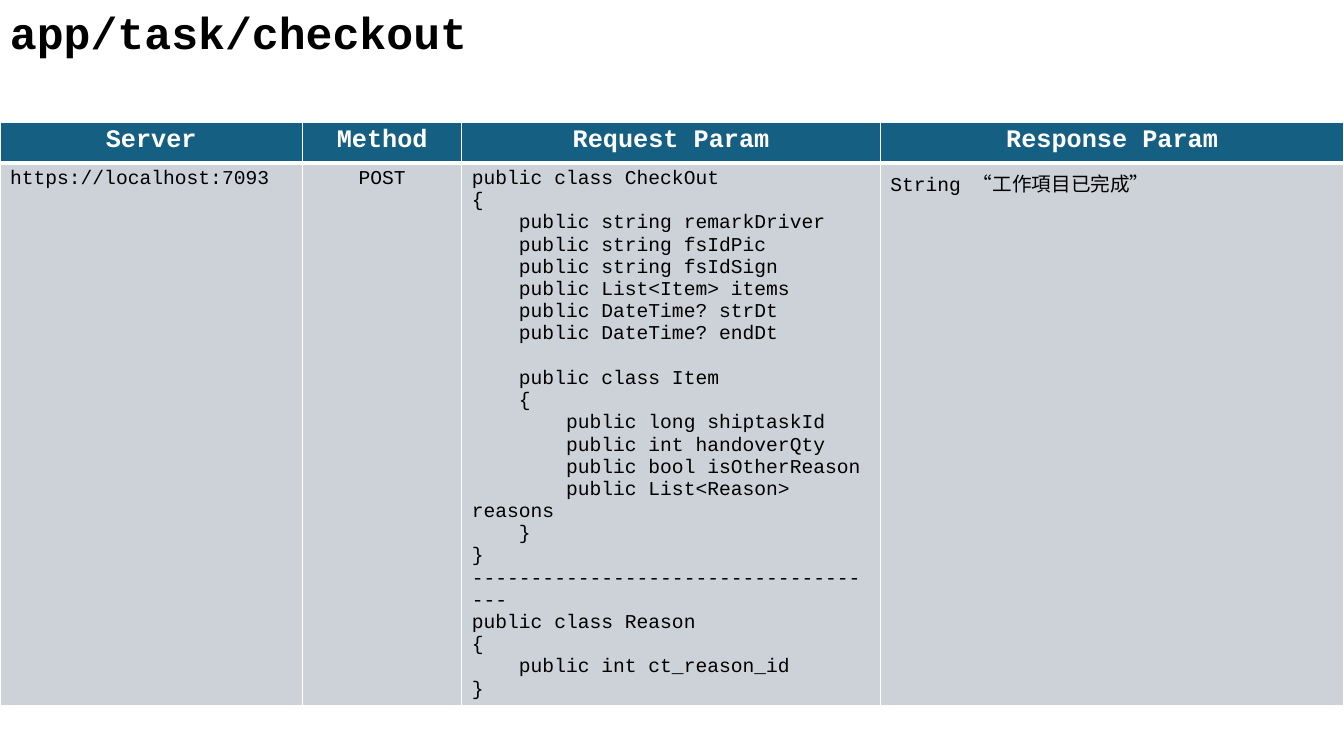
from dataclasses import dataclass

from lxml import etree
from pptx import Presentation
from pptx import util as u
from pptx.dml.color import RGBColor
from pptx.enum import text
from pptx.oxml import ns


@dataclass(frozen=True)
class Theme:
    font: str = "Courier New"
    cjk_font: str = "Noto Sans CJK SC"
    ink: str = "000000"
    white: str = "FFFFFF"
    header_fill: str = "156082"
    body_fill: str = "CCD2D8"
    title_size: int = 32
    header_size: int = 18
    body_size: int = 14
    section_gap: int = 16
    thin: int = 1
    thick: int = 3


LEFT, CENTER = text.PP_ALIGN.LEFT, text.PP_ALIGN.CENTER

REQUEST_CODE = """public class CheckOut
{
    public string remarkDriver
    public string fsIdPic
    public string fsIdSign
    public List<Item> items
    public DateTime? strDt
    public DateTime? endDt

    public class Item
    {
        public long shiptaskId
        public int handoverQty
        public bool isOtherReason
        public List<Reason> reasons
    }
}
------------------------------------
public class Reason
{
    public int ct_reason_id
}"""

# Heading, column width, body text, body alignment
COLUMNS = [
    ("Server", 3, "https://localhost:7093", LEFT),
    ("Method", 1.58, "POST", CENTER),
    ("Request Param", 4.15, REQUEST_CODE, LEFT),
    ("Response Param", 4.6, "String “工作項目已完成”", LEFT),
]
ROW_HEIGHTS = (0.41, 5.23)


class SlideBuilder:
    def __init__(self, slide, theme):
        self.slide = slide
        self.theme = theme

    def add_lines(self, frame, content, size, color, bold=False, align=LEFT):
        """Add lines; an empty line becomes space before the next one."""
        gap = 0
        paragraph = None
        for line in content.split("\n"):
            if not line:
                gap = self.theme.section_gap
                continue
            paragraph = frame.add_paragraph() if paragraph else frame.paragraphs[0]
            paragraph.alignment = align
            if gap:
                paragraph.space_before = u.Pt(gap)
                gap = 0
            run = paragraph.add_run()
            run.text = line
            style = {"name": self.theme.font, "size": u.Pt(size), "bold": bold}
            for key, value in style.items():
                setattr(run.font, key, value)
            run.font.color.rgb = RGBColor.from_string(color)
            east_asian = etree.SubElement(run.font._element, ns.qn("a:ea"))
            east_asian.set("typeface", self.theme.cjk_font)

    def title(self, content, left, top, width, height):
        box = self.slide.shapes.add_textbox(*map(u.Inches, (left, top, width, height)))
        frame = box.text_frame
        layout = {"word_wrap": True, "auto_size": text.MSO_AUTO_SIZE.SHAPE_TO_FIT_TEXT}
        for key, value in layout.items():
            setattr(frame, key, value)
        self.add_lines(frame, content, self.theme.title_size, self.theme.ink, bold=True)

    def borders(self, cell, **widths):
        properties = cell._tc.get_or_add_tcPr()
        for index, side in enumerate("LRTB"):
            width = u.Pt(widths.get(side, self.theme.thin))
            line = etree.Element(ns.qn(f"a:ln{side}"), w=str(int(width)))
            fill = etree.SubElement(line, ns.qn("a:solidFill"))
            etree.SubElement(fill, ns.qn("a:srgbClr"), val=self.theme.white)
            properties.insert(index, line)

    def cell(self, cell, content, fill, size, color, bold, align, **widths):
        cell.fill.solid()
        cell.fill.fore_color.rgb = RGBColor.from_string(fill)
        self.borders(cell, **widths)
        self.add_lines(cell.text_frame, content, size, color, bold, align)

    def table(self, columns, heights, left, top):
        theme = self.theme
        total_width = sum(width for _, width, _, _ in columns)
        sizes = map(u.Inches, (left, top, total_width, sum(heights)))
        table = self.slide.shapes.add_table(len(heights), len(columns), *sizes).table
        for row, height in zip(table.rows, heights):
            row.height = u.Inches(height)
        for index, (heading, width, body, align) in enumerate(columns):
            table.columns[index].width = u.Inches(width)
            self.cell(table.cell(0, index), heading, theme.header_fill,
                      theme.header_size, theme.white, True, CENTER, B=theme.thick)
            self.cell(table.cell(1, index), body, theme.body_fill,
                      theme.body_size, theme.ink, False, align, T=theme.thick)


def main():
    deck = Presentation()
    deck.slide_width, deck.slide_height = u.Inches(13.33), u.Inches(7.5)
    builder = SlideBuilder(deck.slides.add_slide(deck.slide_layouts[6]), Theme())

    # Endpoint specification
    builder.table(COLUMNS, ROW_HEIGHTS, 0, 1.21)

    # Endpoint name
    builder.title("app/task/checkout", 0, 0, 6.39, 0.64)

    deck.save("out.pptx")


if __name__ == "__main__":
    main()
